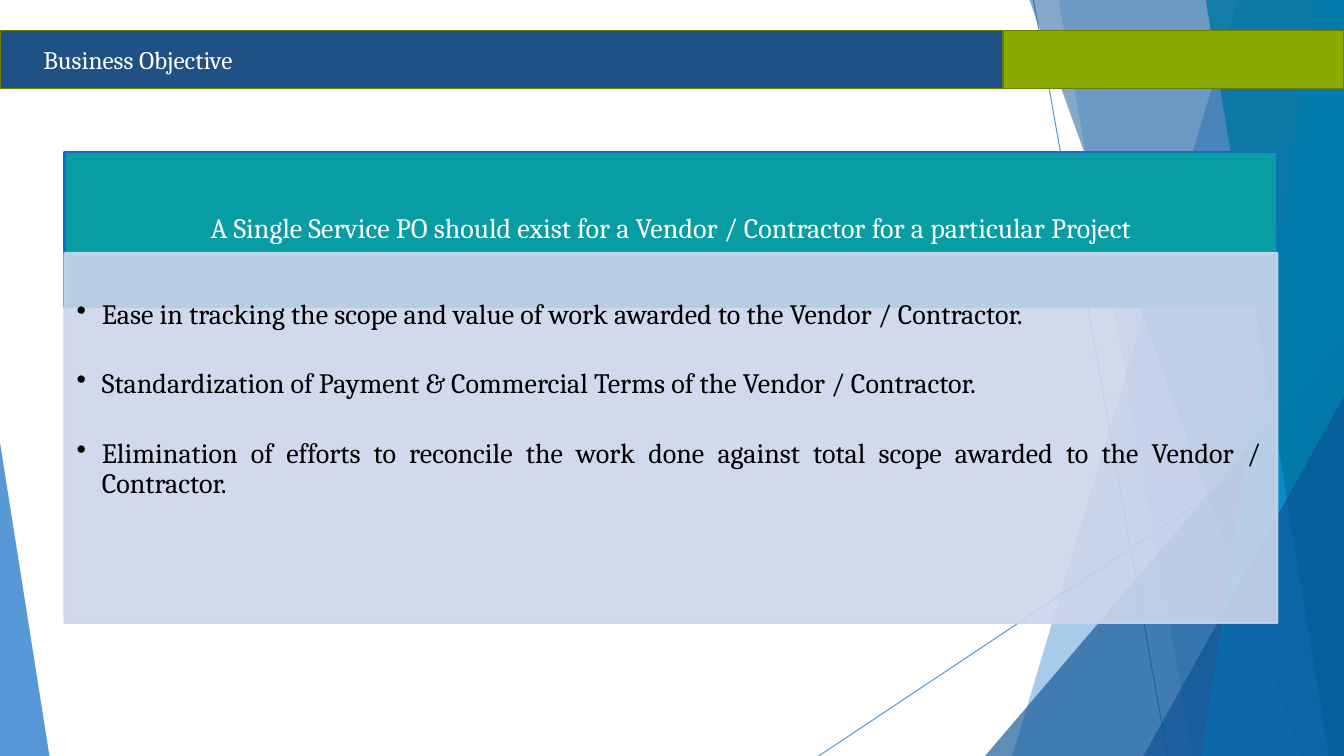
from dataclasses import dataclass
from typing import Optional

from lxml import etree
from pptx import Presentation
from pptx import util as u
from pptx.dml.color import RGBColor
from pptx.enum import shapes, text
from pptx.oxml import ns

WHITE = RGBColor(0xFF, 0xFF, 0xFF)
BLACK = RGBColor(0, 0, 0)
BLUE = RGBColor(0x0F, 0x6F, 0xC6)
DARK_BLUE = RGBColor(0x0B, 0x53, 0x94)
CYAN = RGBColor(0x00, 0x9D, 0xD9)
DEEP_CYAN = RGBColor(0x00, 0x76, 0xA3)
BAR_BLUE = RGBColor(0x20, 0x51, 0x85)
BAR_GREEN = RGBColor(0x8B, 0xAA, 0x00)
BAR_EDGE = RGBColor(0x67, 0x7E, 0x00)
TEAL = RGBColor(0x08, 0x9C, 0xA3)
LAVENDER = RGBColor(0xCC, 0xD5, 0xEA)

FONT = "Cambria"
WIDTH, HEIGHT = 13.33, 7.5


@dataclass
class Ray:
    start: tuple[float, float]
    end: tuple[float, float]


@dataclass
class Band:
    """A facet from the top edge to the bottom edge, ending at the right edge."""
    top_left: float
    bottom_left: float
    color: RGBColor
    opacity: int


@dataclass
class Triangle:
    left: float
    top: float
    width: float
    apex: float
    color: RGBColor
    opacity: int


@dataclass
class Panel:
    left: float
    top: float
    width: float
    height: float
    fill: RGBColor
    edge: RGBColor
    edge_width: float
    opacity: Optional[int] = None


RAYS = [Ray((10.25, 0), (11.58, HEIGHT)), Ray((WIDTH, 4.03), (8.12, HEIGHT))]
FACETS = [
    Band(12.28, 10.04, BLUE, 36),
    Band(10.5, 11.83, BLUE, 20),
    Triangle(9.77, 3.33, 3.56, 1, DARK_BLUE, 66),
    Band(10.21, 12.91, DARK_BLUE, 50),
    Band(13.03, 11.92, CYAN, 70),
    Band(11.96, 13.18, DEEP_CYAN, 80),
    Triangle(11.34, 3.93, 1.99, 1, DARK_BLUE, 66),
    Triangle(0, 4.39, 0.49, 0, BLUE, 70),
]
BARS = [
    Panel(0, 0.3, 9.95, 0.58, BAR_BLUE, BAR_EDGE, 1),
    Panel(9.95, 0.3, 3.38, 0.58, BAR_GREEN, BAR_EDGE, 1),
]
HEADING_PANEL = Panel(0.64, 1.51, 12.03, 1.54, TEAL, BLUE, 1.5)
BENEFITS_PANEL = Panel(0.64, 2.51, 12.03, 3.67, LAVENDER, LAVENDER, 1.5, 90)

HEADING = "A Single Service PO should exist for a Vendor / Contractor for a particular Project"
BENEFITS = [
    ("Ease in tracking the scope and value of work awarded to the Vendor / Contractor.",
     text.PP_ALIGN.LEFT),
    ("Standardization of Payment & Commercial Terms of the Vendor / Contractor.",
     text.PP_ALIGN.LEFT),
    ("Elimination of efforts to reconcile the work done against total scope awarded "
     "to the Vendor / Contractor.", text.PP_ALIGN.JUSTIFY),
]


def set_opacity(fill_format, opacity: int) -> None:
    color = fill_format._xPr.find(ns.qn("a:solidFill"))[0]
    etree.SubElement(color, ns.qn("a:alpha"), val=str(opacity * 1000))


def paint(shape, color: RGBColor, opacity: Optional[int] = None) -> None:
    shape.shadow.inherit = False
    shape.fill.solid()
    shape.fill.fore_color.rgb = color
    if opacity is not None:
        set_opacity(shape.fill, opacity)


def draw_ray(slide, ray: Ray) -> None:
    points = [u.Inches(value) for value in ray.start + ray.end]
    line = slide.shapes.add_connector(shapes.MSO_CONNECTOR.STRAIGHT, *points)
    line.line.width = u.Pt(0.75)
    line.line.color.rgb = BLUE
    set_opacity(line.line.fill, 70)
    etree.SubElement(line._element.spPr, ns.qn("a:effectLst"))


def draw_facet(slide, facet) -> None:
    if isinstance(facet, Band):
        corners = [(WIDTH, 0), (WIDTH, HEIGHT), (facet.bottom_left, HEIGHT)]
        builder = slide.shapes.build_freeform(u.Inches(facet.top_left), 0)
        builder.add_line_segments([(u.Inches(x), u.Inches(y)) for x, y in corners])
        shape = builder.convert_to_shape()
    else:
        shape = slide.shapes.add_shape(
            shapes.MSO_SHAPE.ISOSCELES_TRIANGLE, u.Inches(facet.left), u.Inches(facet.top),
            u.Inches(facet.width), u.Inches(HEIGHT - facet.top))
        shape.adjustments[0] = facet.apex
    paint(shape, facet.color, facet.opacity)
    shape.line.fill.background()


def draw_panel(slide, panel: Panel):
    shape = slide.shapes.add_shape(
        shapes.MSO_SHAPE.RECTANGLE, u.Inches(panel.left), u.Inches(panel.top),
        u.Inches(panel.width), u.Inches(panel.height))
    paint(shape, panel.fill, panel.opacity)
    shape.line.color.rgb = panel.edge
    shape.line.width = u.Pt(panel.edge_width)
    if panel.opacity is not None:
        set_opacity(shape.line.fill, panel.opacity)
    return shape


def set_frame(shape, anchor, left: float, top: float, right: float, bottom: float):
    frame = shape.text_frame
    frame.word_wrap = True
    frame.auto_size = text.MSO_AUTO_SIZE.NONE
    frame.vertical_anchor = anchor
    frame.margin_left, frame.margin_top = u.Inches(left), u.Inches(top)
    frame.margin_right, frame.margin_bottom = u.Inches(right), u.Inches(bottom)
    return frame


def write(paragraph, words: str, size: float, color: RGBColor, alignment) -> None:
    paragraph.alignment = alignment
    run = paragraph.add_run()
    run.text = words
    run.font.name = FONT
    run.font.size = u.Pt(size)
    run.font.color.rgb = color


def add_bullet(paragraph) -> None:
    properties = paragraph._p.get_or_add_pPr()
    properties.set("marL", str(u.Inches(0.25)))
    properties.set("indent", str(-u.Inches(0.25)))
    etree.SubElement(properties, ns.qn("a:buChar"), char="•")


def main() -> None:
    presentation = Presentation()
    presentation.slide_width = u.Inches(WIDTH)
    presentation.slide_height = u.Inches(HEIGHT)
    slide = presentation.slides.add_slide(presentation.slide_layouts.get_by_name("Title Only"))

    # Faceted background
    for ray in RAYS:
        draw_ray(slide, ray)
    for facet in FACETS:
        draw_facet(slide, facet)

    # Title bars, with the title raised above them
    for bar in BARS:
        draw_panel(slide, bar)
    title = slide.shapes.title
    slide.shapes._spTree.append(title._element)
    title.left, title.top = u.Inches(0.33), u.Inches(0.39)
    title.width, title.height = u.Inches(4.96), u.Inches(0.4)
    frame = set_frame(title, text.MSO_ANCHOR.MIDDLE, 0.1, 0.05, 0.1, 0.05)
    write(frame.paragraphs[0], "Business Objective", 18, WHITE, text.PP_ALIGN.LEFT)

    # Objective heading
    heading = draw_panel(slide, HEADING_PANEL)
    frame = set_frame(heading, text.MSO_ANCHOR.MIDDLE, 0.16, 0.09, 0.16, 0.09)
    frame.paragraphs[0].line_spacing = 0.9
    write(frame.paragraphs[0], HEADING, 20, WHITE, text.PP_ALIGN.CENTER)

    # Benefits list
    benefits = draw_panel(slide, BENEFITS_PANEL)
    frame = set_frame(benefits, text.MSO_ANCHOR.TOP, 0.12, 0.47, 0.16, 0.17)
    for index, (words, alignment) in enumerate(BENEFITS):
        paragraph = frame.add_paragraph() if index else frame.paragraphs[0]
        add_bullet(paragraph)
        paragraph.line_spacing = 0.9
        if index:
            paragraph.space_before = u.Pt(28)
        write(paragraph, words, 20, BLACK, alignment)

    presentation.save("out.pptx")


if __name__ == "__main__":
    main()
